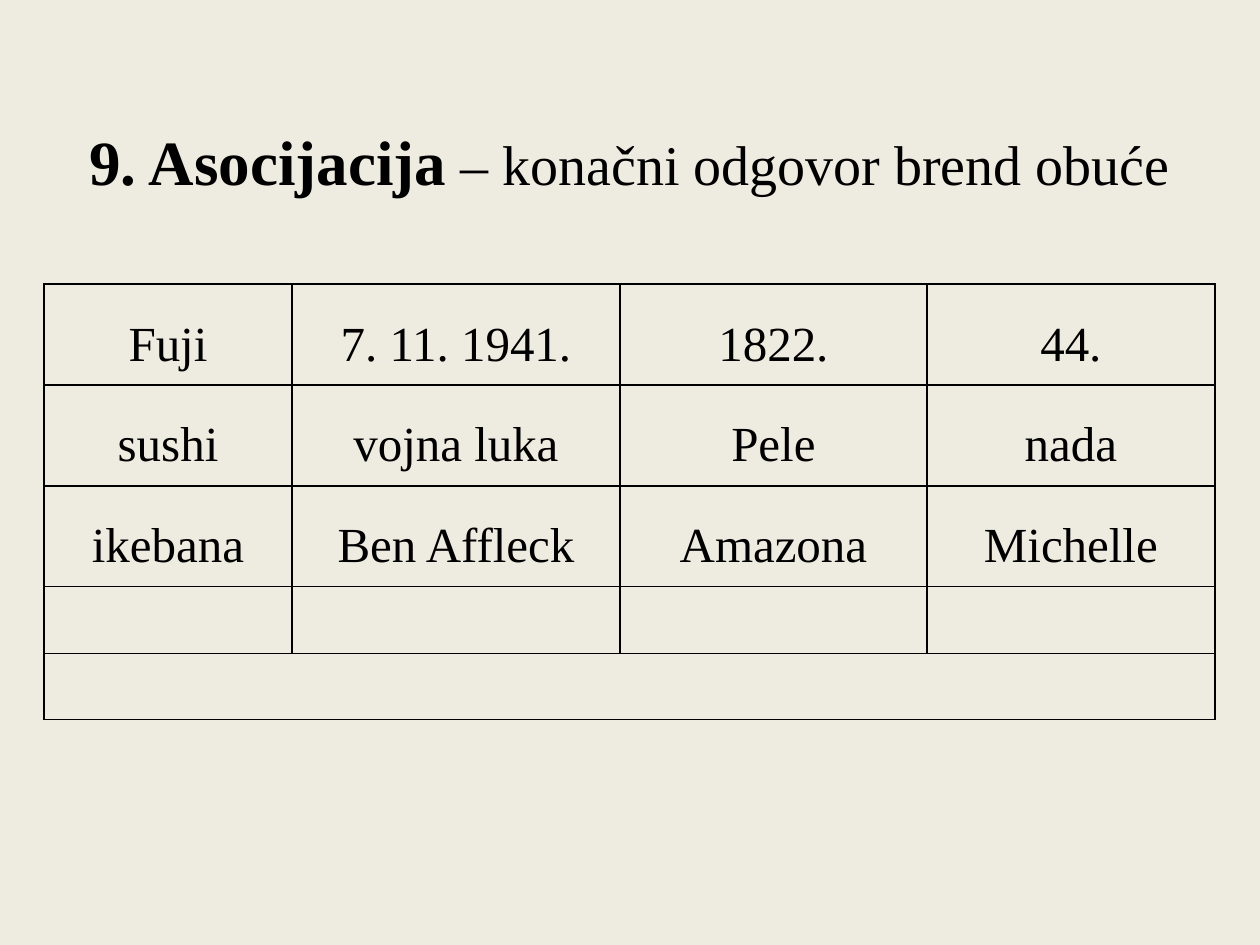
from dataclasses import dataclass

from lxml.etree import SubElement
from pptx import Presentation
from pptx.dml.color import RGBColor
from pptx.enum.text import MSO_ANCHOR as Anchor, MSO_AUTO_SIZE as Fit, PP_ALIGN as Align
from pptx.oxml.ns import qn
from pptx.util import Emu, Pt

SCALE = 914400 // 126  # EMU in one px
FONT = "Times New Roman"
INK = "000000"
PAPER = "EEECE1"
COLS = [248, 328, 307, 288]
ROWS = [94, 94, 94, 67, 66]
CLUES = [
    ["Fuji", "7. 11. 1941.", "1822.", "44."],
    ["sushi", "vojna luka", "Pele", "nada"],
    ["ikebana", "Ben Affleck", "Amazona", "Michelle"],
]


@dataclass
class Part:
    text: str
    size: int
    bold: bool = False


def px(n: int) -> Emu:
    return Emu(n * SCALE)


def color(code: str) -> RGBColor:
    return RGBColor.from_string(code)


def write(para, parts: list[Part]) -> None:
    para.alignment = Align.CENTER
    for part in parts:
        run = para.add_run()
        run.text = part.text
        font = run.font
        font.name, font.size, font.bold = FONT, Pt(part.size), part.bold
        font.color.rgb = color(INK)


def border(cell) -> None:
    props = cell._tc.get_or_add_tcPr()
    for side in ("lnL", "lnR", "lnT", "lnB"):
        line = SubElement(props, qn(f"a:{side}"), w=str(Pt(1)))
        fill = SubElement(line, qn("a:solidFill"))
        SubElement(fill, qn("a:srgbClr"), val=INK)


def draw_title(slide) -> None:
    title = slide.shapes.title
    title.left, title.top = px(0), px(116)
    title.width, title.height = px(1260), px(89)
    frame = title.text_frame
    frame.word_wrap = True
    frame.auto_size = Fit.SHAPE_TO_FIT_TEXT
    frame.vertical_anchor = Anchor.MIDDLE
    write(frame.paragraphs[0], [
        Part("9. Asocijacija", 36, True),
        Part(" – konačni odgovor brend obuće", 32),
    ])


def draw_grid(slide) -> None:
    table = slide.shapes.add_table(
        len(ROWS), len(COLS), px(44), px(284), px(sum(COLS)), px(sum(ROWS))
    ).table
    table.first_row = table.horz_banding = False
    for col, width in zip(table.columns, COLS):
        col.width = px(width)
    for row, height in zip(table.rows, ROWS):
        row.height = px(height)
    for cell in table.iter_cells():
        border(cell)
        cell.fill.background()
    # Clues, then blank answers
    for r, line in enumerate(CLUES):
        for c, clue in enumerate(line):
            para = table.cell(r, c).text_frame.paragraphs[0]
            para.line_spacing = 1.5
            write(para, [Part(clue, 28)])
    # Final answer spans the last row
    last = len(ROWS) - 1
    table.cell(last, 0).merge(table.cell(last, len(COLS) - 1))


def main() -> None:
    deck = Presentation()
    deck.slide_width, deck.slide_height = px(1260), px(945)
    slide = deck.slides.add_slide(deck.slide_layouts[5])
    back = slide.background.fill
    back.solid()
    back.fore_color.rgb = color(PAPER)
    draw_grid(slide)
    draw_title(slide)
    deck.save("out.pptx")


if __name__ == "__main__":
    main()
